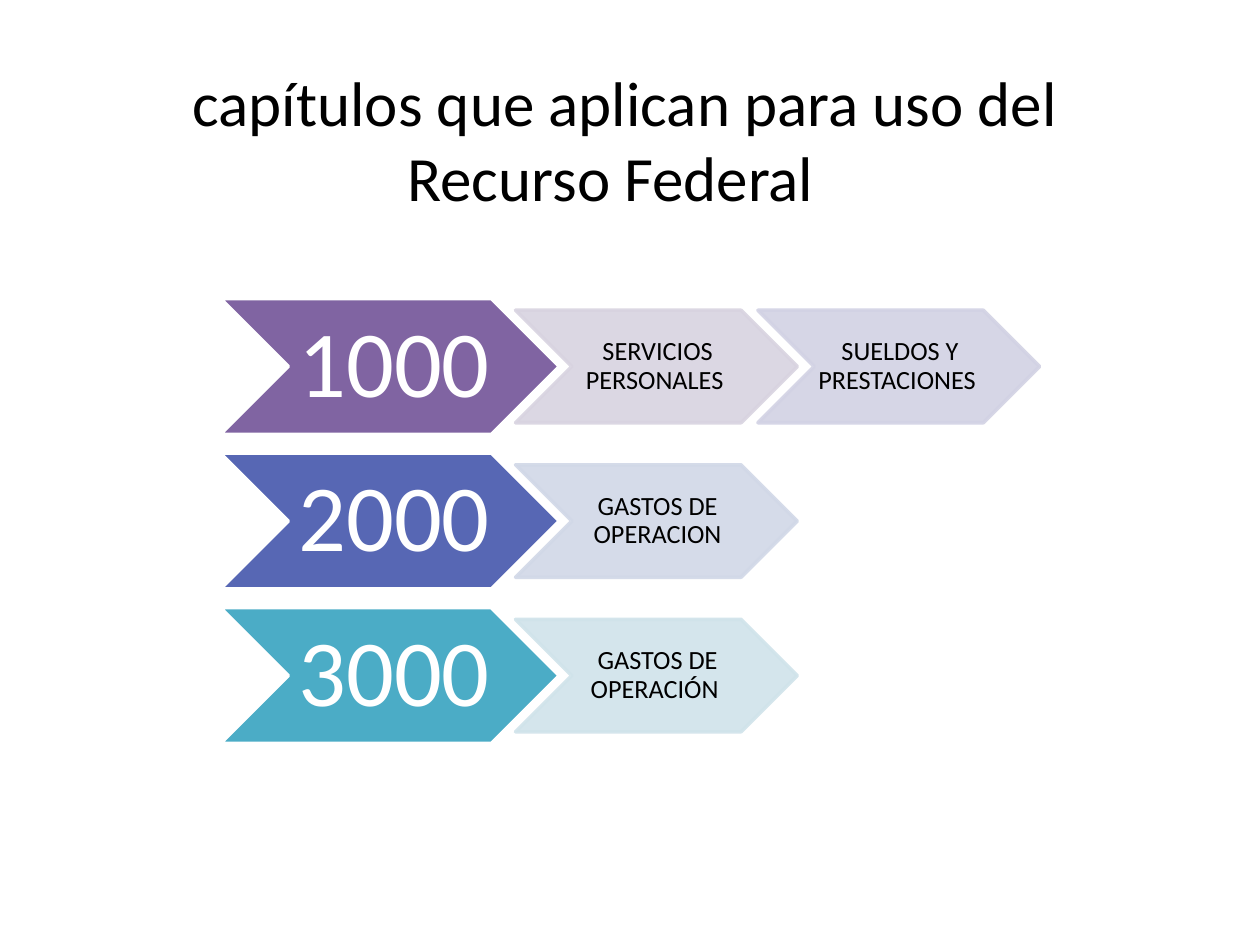
import pptx
import pptx.dml.color
import pptx.enum.shapes
import pptx.enum.text
import pptx.oxml
import pptx.oxml.ns
import pptx.util

Pt = pptx.util.Pt
CHAPTERS = [
    ("1000", "8064A2", [("SERVICIOS PERSONALES ", "D8D3E0"), ("SUELDOS Y PRESTACIONES ", "D2D2E4")]),
    ("2000", "5767B4", [("GASTOS DE OPERACION", "D1D8E7")]),
    ("3000", "4BACC6", [("GASTOS DE OPERACIÓN ", "D0E3EA")]),
]
CHAPTER_WIDTH, CHAPTER_HEIGHT = 193.6, 77.5
DETAIL_WIDTH, DETAIL_HEIGHT = 161, 64.3
DETAIL_OFFSET, DETAIL_PITCH, ROW_PITCH = 168.6, 138.5, 88.3


def rgb(value):
    """Turn a hex string into a colour."""
    return pptx.dml.color.RGBColor.from_string(value)


def write(shape, text, size, color, margins):
    """Set centred text with margins given as left, top, right, bottom."""
    frame = shape.text_frame
    frame.text = text
    frame.word_wrap = True
    frame.auto_size = pptx.enum.text.MSO_AUTO_SIZE.NONE
    frame.vertical_anchor = pptx.enum.text.MSO_ANCHOR.MIDDLE
    frame.margin_left, frame.margin_top, frame.margin_right, frame.margin_bottom = map(Pt, margins)
    paragraph = frame.paragraphs[0]
    paragraph.alignment = pptx.enum.text.PP_ALIGN.CENTER
    paragraph.font.name = "Calibri"
    paragraph.font.size = Pt(size)
    paragraph.font.color.rgb = rgb(color)
    return paragraph


def set_opacity(shape, percent):
    """Make the fill and line of a shape partly transparent."""
    for color in shape.element.spPr.iter(pptx.oxml.ns.qn("a:srgbClr")):
        alpha = pptx.oxml.parse_xml(f'<a:alpha {pptx.oxml.ns.nsdecls("a")} val="{percent * 1000}"/>')
        color.append(alpha)


def add_chevron(slide, box, text, fill, line, size, color, margins):
    """Add a labelled chevron in the given box."""
    chevron = slide.shapes.add_shape(pptx.enum.shapes.MSO_SHAPE.CHEVRON, *map(Pt, box))
    chevron.shadow.inherit = False
    chevron.fill.solid()
    chevron.fill.fore_color.rgb = rgb(fill)
    chevron.line.color.rgb = rgb(line)
    chevron.line.width = Pt(2)
    write(chevron, text, size, color, margins).line_spacing = 0.9
    return chevron


def add_title(slide, left, top, width, height):
    """Place the title in its box."""
    title = slide.shapes.title
    title.left, title.top, title.width, title.height = map(Pt, (left, top, width, height))
    write(title, "capítulos que aplican para uso del Recurso Federal  ", 36, "000000", (7.2, 3.6, 7.2, 3.6))


def add_chapter_row(slide, left, top, number, fill, details):
    """Add a chapter chevron followed by its detail chevrons."""
    add_chevron(slide, (left, top, CHAPTER_WIDTH, CHAPTER_HEIGHT), number, fill, "FFFFFF",
                54, "FFFFFF", (5, 2.7, 0, 2.7))
    detail_top = top + (CHAPTER_HEIGHT - DETAIL_HEIGHT) / 2
    for column, (label, tint) in enumerate(details):
        box = (left + DETAIL_OFFSET + column * DETAIL_PITCH, detail_top, DETAIL_WIDTH, DETAIL_HEIGHT)
        detail = add_chevron(slide, box, label, tint, tint, 15, "000000", (1.4, 0.7, 0, 0.7))
        set_opacity(detail, 90)


def main():
    """Build and save the slide."""
    deck = pptx.Presentation()
    deck.slide_width, deck.slide_height = Pt(720), Pt(540)
    slide = deck.slides.add_slide(deck.slide_layouts[5])
    add_title(slide, 46.8, 54, 620.6, 50.4)
    for row, chapter in enumerate(CHAPTERS):
        add_chapter_row(slide, 126, 170.7 + row * ROW_PITCH, *chapter)
    deck.save("out.pptx")


if __name__ == "__main__":
    main()
